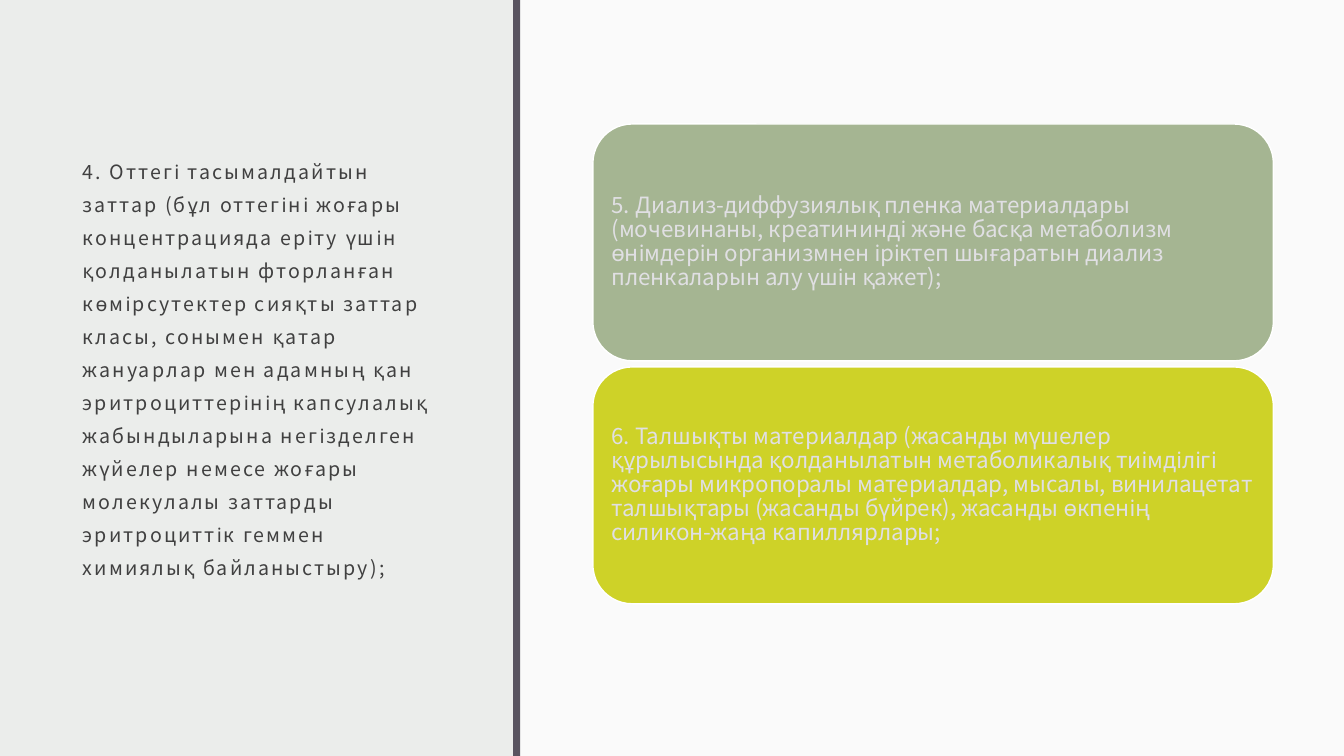
import pptx
import pptx.dml.color
import pptx.enum.shapes
import pptx.enum.text
import pptx.util

WIDTH, HEIGHT = 13.33, 7.5
FONT = "Noto Sans CJK JP"

OXYGEN_CARRIERS = (
    "4. Оттегі тасымалдайтын заттар (бұл оттегіні жоғары концентрацияда еріту үшін "
    "қолданылатын фторланған көмірсутектер сияқты заттар класы, сонымен қатар жануарлар "
    "мен адамның қан эритроциттерінің капсулалық жабындыларына негізделген жүйелер немесе "
    "жоғары молекулалы заттарды эритроциттік геммен химиялық байланыстыру);"
)
MATERIALS = [
    ("A5B592",
     "5. Диализ-диффузиялық пленка материалдары (мочевинаны, креатининді және басқа "
     "метаболизм өнімдерін организмнен іріктеп шығаратын диализ пленкаларын алу үшін қажет);"),
    ("CED228",
     "6. Талшықты материалдар (жасанды мүшелер құрылысында қолданылатын метаболикалық "
     "тиімділігі жоғары микропоралы материалдар, мысалы, винилацетат талшықтары (жасанды "
     "бүйрек), жасанды өкпенің силикон-жаңа капиллярлары;"),
]


def color(hex_text):
    return pptx.dml.color.RGBColor.from_string(hex_text)


def write(frame, text, size, ink, line_spacing, insets, tracking=0):
    """Fill a text frame with one left-aligned, vertically centred paragraph."""
    frame.word_wrap = True
    frame.auto_size = pptx.enum.text.MSO_AUTO_SIZE.NONE
    frame.vertical_anchor = pptx.enum.text.MSO_ANCHOR.MIDDLE
    (frame.margin_left, frame.margin_top,
     frame.margin_right, frame.margin_bottom) = map(pptx.util.Inches, insets)
    paragraph = frame.paragraphs[0]
    paragraph.alignment = pptx.enum.text.PP_ALIGN.LEFT
    paragraph.line_spacing = line_spacing
    paragraph.space_before = pptx.util.Pt(0)
    run = paragraph.add_run()
    run.text = text
    run.font.name = FONT
    run.font.size = pptx.util.Pt(size)
    run.font.color.rgb = color(ink)
    if tracking:
        run.font._element.set("spc", str(int(tracking * 100)))


class SlideBuilder:
    """Holds the style and the current slide; lengths are shares of the slide."""

    def __init__(self, deck, background):
        self.deck = deck
        self.slide = deck.slides.add_slide(deck.slide_layouts[5])
        fill = self.slide.background.fill
        fill.solid()
        fill.fore_color.rgb = color(background)

    def place(self, left, top, width, height):
        across, down = self.deck.slide_width, self.deck.slide_height
        return (round(left * across), round(top * down),
                round(width * across), round(height * down))

    def block(self, box, fill, outline=None, rounded=False):
        kinds = pptx.enum.shapes.MSO_SHAPE
        kind = kinds.ROUNDED_RECTANGLE if rounded else kinds.RECTANGLE
        block = self.slide.shapes.add_shape(kind, *self.place(*box))
        block.shadow.inherit = False
        block.fill.solid()
        block.fill.fore_color.rgb = color(fill)
        if outline:
            block.line.color.rgb = color(outline)
            block.line.width = pptx.util.Pt(1)
        else:
            block.line.fill.background()
        return block

    def title(self, box, text):
        heading = self.slide.shapes.title
        heading.left, heading.top, heading.width, heading.height = self.place(*box)
        write(heading.text_frame, text, size=14, ink="404040", line_spacing=1.4,
              insets=(0.12, 0.12, 0.12, 0.1), tracking=1.5)

    def card(self, box, fill, text):
        card = self.block(box, fill, outline="FFFFFF", rounded=True)
        write(card.text_frame, text, size=16, ink="E0DFE3", line_spacing=0.9,
              insets=(0.07,) * 4)


def main():
    deck = pptx.Presentation()
    deck.slide_width = pptx.util.Inches(WIDTH)
    deck.slide_height = pptx.util.Inches(HEIGHT)
    builder = SlideBuilder(deck, background="EBEDEB")

    # Left side: oxygen carriers
    builder.title((0.7 / WIDTH, 0.77 / HEIGHT, 3.73 / WIDTH, 5.68 / HEIGHT),
                  OXYGEN_CARRIERS)

    # Right panel and the dividing bar
    divider = 5.09 / WIDTH
    builder.block((divider, 0, 1 - divider, 1), "FAFAFA")
    builder.block((divider, 0, 0.07 / WIDTH, 1), "595460")

    # Material cards, stacked at an equal pitch
    card_top, pitch = 1.23 / HEIGHT, 2.41 / HEIGHT
    for row, (fill, text) in enumerate(MATERIALS):
        builder.card((5.88 / WIDTH, card_top + row * pitch, 6.75 / WIDTH, 2.35 / HEIGHT),
                     fill, text)

    deck.save("out.pptx")


if __name__ == "__main__":
    main()
